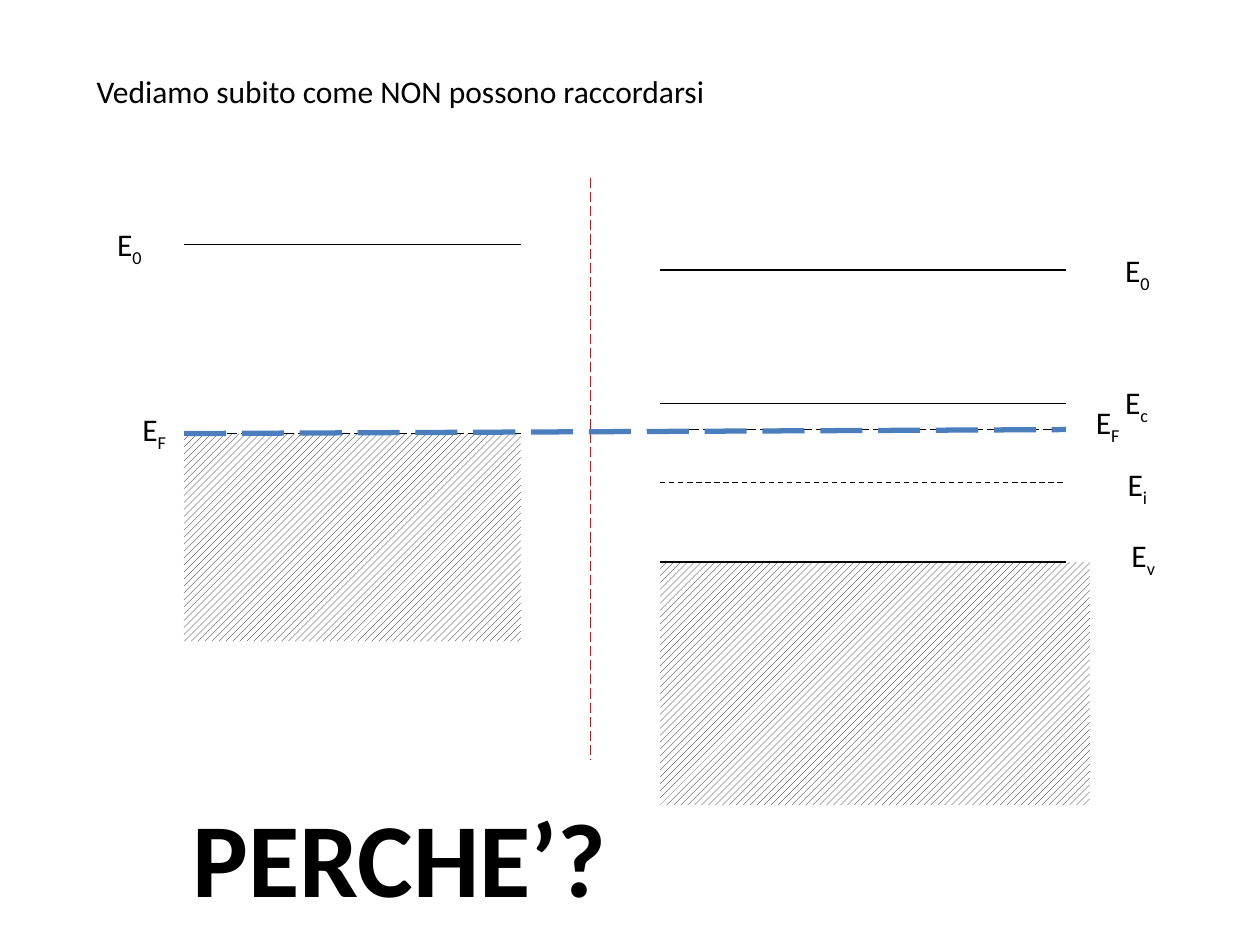
from lxml import etree
from pptx import Presentation
from pptx.dml.color import RGBColor
from pptx.enum.dml import MSO_LINE, MSO_PATTERN
from pptx.enum.shapes import MSO_CONNECTOR, MSO_SHAPE
from pptx.enum.text import MSO_AUTO_SIZE
from pptx.oxml.ns import qn
from pptx.util import Cm, Pt

BLACK = RGBColor(0, 0, 0)
WHITE = RGBColor(255, 255, 255)
RED = RGBColor(255, 0, 0)
BLUE = RGBColor(0x4B, 0x7E, 0xBC)
LONG = MSO_LINE.LONG_DASH
DASH = MSO_LINE.DASH
HATCH = MSO_PATTERN.WIDE_UPWARD_DIAGONAL
STRAIGHT = MSO_CONNECTOR.STRAIGHT
RECT = MSO_SHAPE.RECTANGLE
FIT = MSO_AUTO_SIZE.SHAPE_TO_FIT_TEXT


def put(para, text, size=18, bold=False, sub=False):
    run = para.add_run()
    run.text = text
    font = run.font
    font.name = "Calibri"
    font.size = Pt(size)
    font.bold = bold
    font.color.rgb = BLACK
    if sub:
        run._r.get_or_add_rPr().set("baseline", "-25000")


class Board:
    def __init__(self, slide):
        self.shapes = slide.shapes

    def line(self, x1, y1, x2, y2, color=BLACK, width=0.75, dash=None):
        item = self.shapes.add_connector(STRAIGHT, Cm(x1), Cm(y1), Cm(x2), Cm(y2))
        item.line.color.rgb = color
        item.line.width = Pt(width)
        if dash is not None:
            item.line.dash_style = dash
        etree.SubElement(item._element.spPr, qn("a:effectLst"))

    def band(self, x, y, width, height):
        """Draw a hatched block of filled states."""
        item = self.shapes.add_shape(RECT, Cm(x), Cm(y), Cm(width), Cm(height))
        item.shadow.inherit = False
        item.fill.patterned()
        item.fill.pattern = HATCH
        item.fill.fore_color.rgb = BLACK
        item.fill.back_color.rgb = WHITE
        item.line.fill.background()

    def text(self, x, y, width, height, words, sub="", **style):
        box = self.shapes.add_textbox(Cm(x), Cm(y), Cm(width), Cm(height))
        frame = box.text_frame
        frame.word_wrap = False
        frame.auto_size = FIT
        para = frame.paragraphs[0]
        put(para, words, **style)
        if sub:
            put(para, sub, sub=True, **style)

    def label(self, x, y, sub, width=1.02):
        self.text(x, y, width, 1.02, "E", sub)


def main():
    deck = Presentation()
    deck.slide_width, deck.slide_height = Cm(25.4), Cm(19.05)
    board = Board(deck.slides.add_slide(deck.slide_layouts[6]))

    # Metal
    left, edge, fermi = 3.71, 10.5, 8.74
    board.line(left, 4.93, edge, 4.93)
    board.band(left, fermi, edge - left, 4.19)
    board.line(left, fermi, edge, fermi, dash=LONG)
    board.label(2.11, 4.42, "0", 1.04)
    board.label(2.62, 8.15, "F")

    # Semiconductor: level, dash, label x, label y, subscript, label width
    start, end, top = 13.31, 21.49, 11.33
    levels = [
        (5.44, None, 22.43, 4.93, "0", 1.04),
        (8.13, None, 22.43, 7.59, "c", 0.99),
        (8.66, LONG, 21.84, 8.0, "F", 1.02),
        (9.73, DASH, 22.48, 9.25, "i", 0.91),
        (top, None, 22.56, 10.69, "v", 0.99),
    ]
    board.band(start, top, 8.66, 4.9)
    for level, dash, x, y, sub, width in levels:
        board.line(start, level, end, level, dash=dash)
        board.label(x, y, sub, width)

    # Junction and common Fermi level
    board.line(11.91, 3.58, 11.91, 15.32, RED, dash=LONG)
    board.text(1.7, 1.32, 12.9, 1.02, "Vediamo subito come NON possono raccordarsi")
    board.text(3.63, 15.85, 8.94, 2.82, "PERCHE’?", size=60, bold=True)
    board.line(left, fermi, end, 8.66, BLUE, 3, LONG)

    deck.save("out.pptx")


if __name__ == "__main__":
    main()
